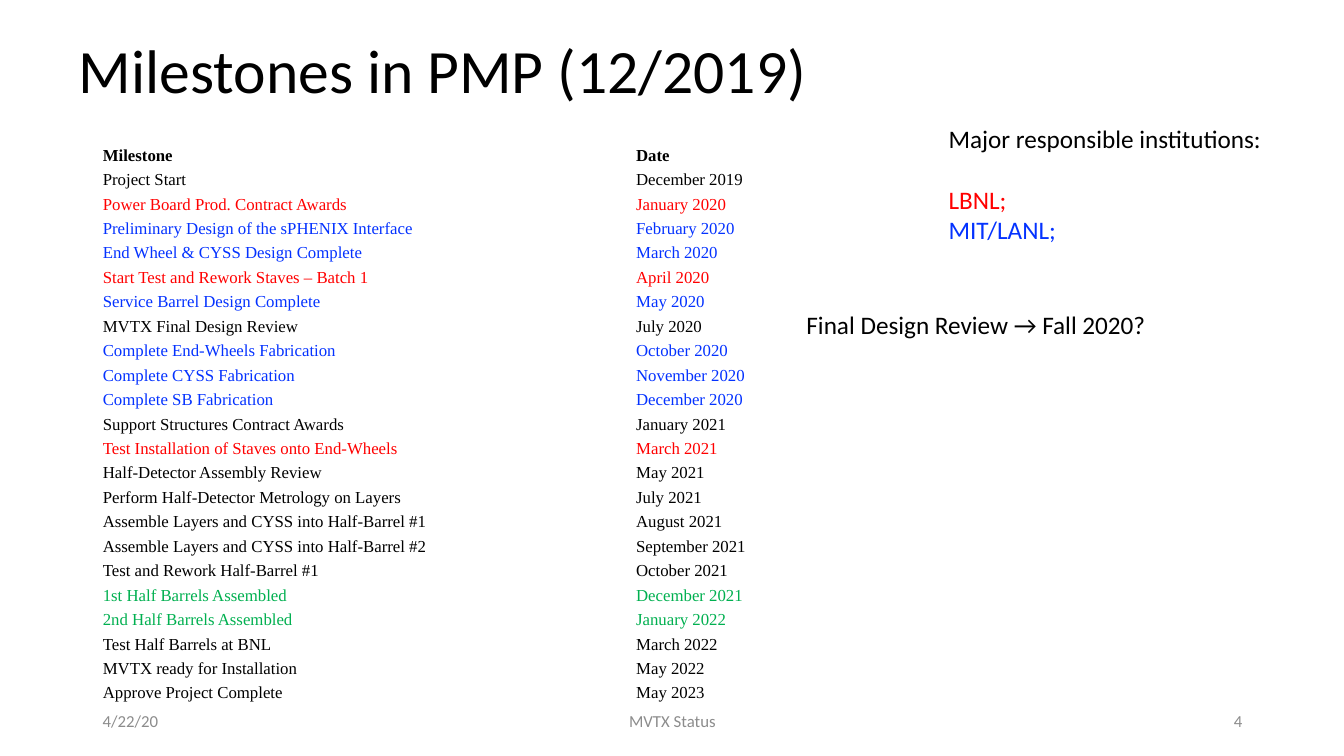
from dataclasses import dataclass

from pptx import Presentation
from pptx.dml.color import RGBColor
from pptx.enum import text
from pptx.util import Inches, Pt


@dataclass(frozen=True)
class Theme:
    sans: str = "Calibri"
    serif: str = "Times New Roman"
    black: str = "000000"
    red: str = "FF0000"
    blue: str = "0432FF"
    green: str = "00B050"
    grey: str = "8C8C8C"
    title_size: int = 44
    note_size: int = 18
    small_size: int = 12


THEME = Theme()
BLACK, RED, BLUE, GREEN = THEME.black, THEME.red, THEME.blue, THEME.green
LEFT, CENTER, RIGHT = text.PP_ALIGN.LEFT, text.PP_ALIGN.CENTER, text.PP_ALIGN.RIGHT

MILESTONES = [
    ("Milestone", "Date", BLACK),
    ("Project Start", "December 2019", BLACK),
    ("Power Board Prod. Contract Awards", "January 2020", RED),
    ("Preliminary Design of the sPHENIX Interface", "February 2020", BLUE),
    ("End Wheel & CYSS Design Complete", "March 2020", BLUE),
    ("Start Test and Rework Staves – Batch 1", "April 2020", RED),
    ("Service Barrel Design Complete", "May 2020", BLUE),
    ("MVTX Final Design Review", "July 2020", BLACK),
    ("Complete End-Wheels Fabrication", "October 2020", BLUE),
    ("Complete CYSS Fabrication", "November 2020", BLUE),
    ("Complete SB Fabrication", "December 2020", BLUE),
    ("Support Structures Contract Awards", "January 2021", BLACK),
    ("Test Installation of Staves onto End-Wheels", "March 2021", RED),
    ("Half-Detector Assembly Review", "May 2021", BLACK),
    ("Perform Half-Detector Metrology on Layers", "July 2021", BLACK),
    ("Assemble Layers and CYSS into Half-Barrel #1", "August 2021", BLACK),
    ("Assemble Layers and CYSS into Half-Barrel #2", "September 2021", BLACK),
    ("Test and Rework Half-Barrel #1", "October 2021", BLACK),
    ("1st Half Barrels Assembled", "December 2021", GREEN),
    ("2nd Half Barrels Assembled", "January 2022", GREEN),
    ("Test Half Barrels at BNL", "March 2022", BLACK),
    ("MVTX ready for Installation", "May 2022", BLACK),
    ("Approve Project Complete", "May 2023", BLACK),
]


class SlideBuilder:
    def __init__(self, deck, theme):
        self.theme = theme
        self.page = deck.slides.add_slide(deck.slide_layouts[5])

    def add_span(self, para, words, size, color, font=None, bold=False):
        span = para.add_run()
        span.text = words
        span.font.name = font or self.theme.sans
        span.font.size = Pt(size)
        span.font.bold = bold
        span.font.color.rgb = RGBColor.from_string(color)

    def title(self, words, left, top, width, height):
        box = self.page.shapes.title
        box.left, box.top = Inches(left), Inches(top)
        box.width, box.height = Inches(width), Inches(height)
        box.text_frame.vertical_anchor = text.MSO_ANCHOR.MIDDLE
        para = box.text_frame.paragraphs[0]
        para.alignment = LEFT
        para.line_spacing = 0.9
        self.add_span(para, words, self.theme.title_size, self.theme.black)

    def table(self, rows, left, top, widths, height):
        """Add a plain table of (milestone, date, colour) rows, headed by the first."""
        frame = self.page.shapes.add_table(
            len(rows), len(widths), Inches(left), Inches(top),
            Inches(sum(widths)), Inches(height))
        table = frame.table
        table.first_row = table.horz_banding = False
        for column, width in zip(table.columns, widths):
            column.width = Inches(width)
        for index, (*entries, color) in enumerate(rows):
            table.rows[index].height = Inches(height / len(rows))
            for cell, entry in zip(table.rows[index].cells, entries):
                cell.fill.background()
                cell.margin_left = cell.margin_right = Inches(0.04)
                cell.margin_top = cell.margin_bottom = 0
                self.add_span(cell.text_frame.paragraphs[0], entry, self.theme.small_size,
                              color, self.theme.serif, bold=index == 0)

    def text_box(self, left, top, width, height):
        box = self.page.shapes.add_textbox(
            Inches(left), Inches(top), Inches(width), Inches(height))
        return box.text_frame

    def note(self, lines, left, top, width, height):
        """Add an unwrapped box of (words, colour, points of space before) lines."""
        frame = self.text_box(left, top, width, height)
        frame.word_wrap = False
        frame.auto_size = text.MSO_AUTO_SIZE.SHAPE_TO_FIT_TEXT
        for index, (words, color, gap) in enumerate(lines):
            para = frame.add_paragraph() if index else frame.paragraphs[0]
            para.space_before = Pt(gap)
            self.add_span(para, words, self.theme.note_size, color)

    def footer(self, words, left, width, alignment):
        frame = self.text_box(left, 6.95, width, 0.4)
        frame.word_wrap = True
        frame.vertical_anchor = text.MSO_ANCHOR.MIDDLE
        para = frame.paragraphs[0]
        para.alignment = alignment
        self.add_span(para, words, self.theme.small_size, self.theme.grey)


def main():
    deck = Presentation()
    deck.slide_width, deck.slide_height = Inches(13.33), Inches(7.5)
    slide = SlideBuilder(deck, THEME)
    slide.title("Milestones in PMP (12/2019)", 0.68, 0, 11.5, 1.45)
    slide.table(MILESTONES, 0.98, 1.45, (5.29, 5.26), 5.58)
    slide.note([("Major responsible institutions:", BLACK, 0),
                ("LBNL;", RED, 22),
                ("MIT/LANL;", BLUE, 0)], 9.31, 1.17, 3.34, 1.31)
    slide.note([("Final Design Review → Fall 2020?", BLACK, 0)], 7.9, 3.02, 3.62, 0.4)
    slide.footer("4/22/20", 0.92, 3, LEFT)
    slide.footer("MVTX Status", 4.42, 4.5, CENTER)
    slide.footer("4", 9.42, 3, RIGHT)
    deck.save("out.pptx")


if __name__ == "__main__":
    main()
